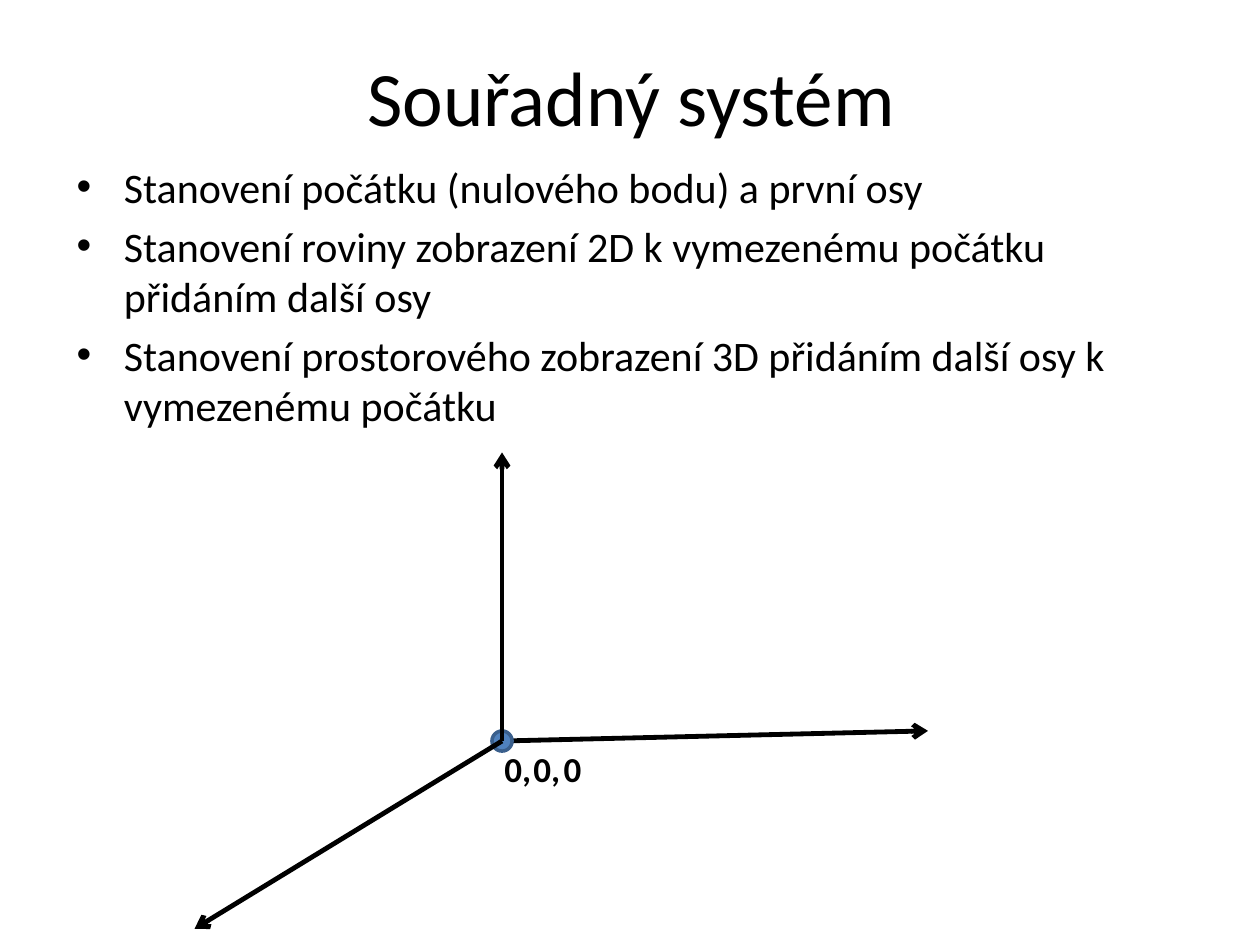
from pptx import Presentation
from pptx.dml.color import RGBColor
from pptx.enum.shapes import MSO_CONNECTOR, MSO_SHAPE
from pptx.enum.text import MSO_ANCHOR, MSO_AUTO_SIZE, PP_ALIGN
from pptx.oxml.ns import qn
from pptx.util import Pt
from lxml import etree

STRAIGHT = MSO_CONNECTOR.STRAIGHT
OVAL = MSO_SHAPE.OVAL
MIDDLE, TOP = MSO_ANCHOR.MIDDLE, MSO_ANCHOR.TOP
CENTER, LEFT = PP_ALIGN.CENTER, PP_ALIGN.LEFT
FIT_SHAPE = MSO_AUTO_SIZE.SHAPE_TO_FIT_TEXT

BLACK = RGBColor(0x00, 0x00, 0x00)
POINT_FILL = RGBColor(0x4F, 0x81, 0xBD)
POINT_EDGE = RGBColor(0x3A, 0x5F, 0x8C)

TITLE = "Souřadný systém"
STEPS = [
    "Stanovení počátku (nulového bodu) a první osy",
    "Stanovení roviny zobrazení 2D k vymezenému počátku přidáním další osy",
    "Stanovení prostorového zobrazení 3D přidáním další osy k vymezenému počátku",
]
# Each axis: tip and coordinate label, both relative to the origin
# (tip offset, label text, label offset, label width)
AXES = [
    ((243.4, -5.8), "0,", -5.8, 30.2),
    ((0, -164.9), "0,", 10.8, 30.2),
    ((-175.7, 107.3), "0", 28.1, 24.5),
]


def set_format(target, values):
    for name, value in values.items():
        setattr(target, name, value)


def add_text(slide, box, lines, size, bold=False, align=LEFT, bullets=False, **frame_format):
    frame = slide.shapes.add_textbox(*map(Pt, box)).text_frame
    set_format(frame, {"word_wrap": True, "vertical_anchor": TOP, **frame_format})
    for index, line in enumerate(lines):
        paragraph = frame.paragraphs[0] if index == 0 else frame.add_paragraph()
        paragraph.text = line
        paragraph.alignment = align
        if index:
            paragraph.space_before = Pt(size * 0.2)
        if bullets:
            add_bullet(paragraph)
        set_format(paragraph.font, {"name": "Calibri", "size": Pt(size), "bold": bold})
        paragraph.font.color.rgb = BLACK


def add_bullet(paragraph):
    properties = paragraph._p.get_or_add_pPr()
    properties.set("marL", str(Pt(27)))
    properties.set("indent", str(-Pt(27)))
    etree.SubElement(properties, qn("a:buFont")).set("typeface", "Arial")
    etree.SubElement(properties, qn("a:buChar")).set("char", "•")


def add_axis(slide, origin, offset):
    x, y = origin
    axis = slide.shapes.add_connector(
        STRAIGHT, Pt(x), Pt(y), Pt(x + offset[0]), Pt(y + offset[1]))
    axis.line.color.rgb = BLACK
    axis.line.width = Pt(2.75)
    etree.SubElement(axis.line._get_or_add_ln(), qn("a:tailEnd")).set("type", "arrow")
    etree.SubElement(axis._element.spPr, qn("a:effectLst"))


def add_origin_point(slide, origin, diameter=11.5):
    x, y = (value - diameter / 2 for value in origin)
    point = slide.shapes.add_shape(OVAL, Pt(x), Pt(y), Pt(diameter), Pt(diameter))
    point.shadow.inherit = False
    point.fill.solid()
    point.fill.fore_color.rgb = POINT_FILL
    point.line.color.rgb = POINT_EDGE
    point.line.width = Pt(2)


def add_coordinate_system(slide, box):
    """Draw three axes whose origin sits at fixed shares of the box."""
    left, top, width, height = box
    origin = (left + width * 0.42, top + height * 0.606)
    for number, (tip, label, label_x, label_width) in enumerate(AXES):
        if number == 1:
            add_origin_point(slide, origin)
        add_axis(slide, origin, tip)
        label_box = (origin[0] + label_x, origin[1], label_width, 31.7)
        add_text(slide, label_box, [label], 20, bold=True,
                 word_wrap=False, auto_size=FIT_SHAPE)


def main():
    presentation = Presentation()
    presentation.slide_width, presentation.slide_height = Pt(720), Pt(540)
    slide = presentation.slides.add_slide(presentation.slide_layouts[6])
    add_text(slide, (36.7, 9.4, 648, 90), [TITLE], 44, align=CENTER, vertical_anchor=MIDDLE)
    add_text(slide, (36.7, 88.6, 648, 356.4), STEPS, 24, bullets=True)
    add_coordinate_system(slide, (110.9, 258.5, 419, 272.2))
    presentation.save("out.pptx")


if __name__ == "__main__":
    main()
